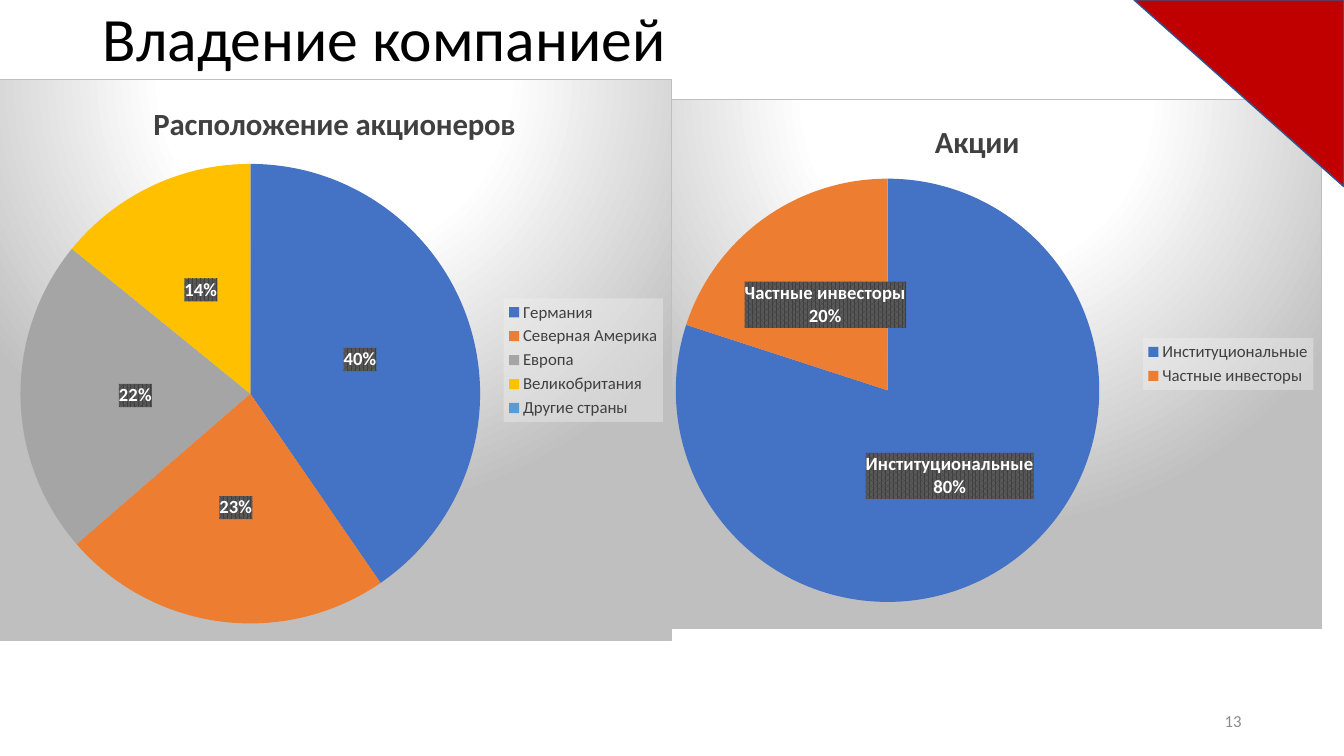
from pptx import Presentation
from pptx.chart.data import CategoryChartData as PieData
from pptx.dml.color import RGBColor
from pptx.enum.chart import XL_CHART_TYPE as Kind, XL_LABEL_POSITION as Spot, XL_LEGEND_POSITION as Side
from pptx.enum.shapes import MSO_SHAPE as Form
from pptx.enum.text import MSO_ANCHOR as Anchor, PP_ALIGN as Align
from pptx.oxml import parse_xml
from pptx.oxml.ns import nsdecls, qn
from pptx.util import Cm, Pt

FONT = "Calibri"
COLORS = ["4472C4", "ED7D31", "A5A5A5", "FFC000", "5B9BD5"]
TITLE = ("Владение компанией", (2.34, -0.79, 29.21, 3.68))
NUMBER = ("13", (23.92, 17.65, 7.62, 1.02))
CORNER = (28.58, 0, 5.28, 4.7)
SHARES = {
    "title": "Акции",
    "box": (15.93, 2.49, 17.39, 13.36),
    "plot": (0.02, 0.15, 0.7, 0.8),
    "rows": [("Институциональные", 80), ("Частные инвесторы", 20)],
    "named": True,
}
PLACES = {
    "title": "Расположение акционеров",
    "box": (-0.07, 2, 17, 14.15),
    "plot": (0.03, 0.15, 0.69, 0.82),
    "rows": [("Германия", 40), ("Северная Америка", 23), ("Европа", 22),
             ("Великобритания", 14), ("Другие страны", 0)],
    "named": False,
}
BACK = """<a:gradFill><a:gsLst><a:gs pos="0"><a:srgbClr val="FFFFFF"/></a:gs>
<a:gs pos="39000"><a:srgbClr val="FFFFFF"/></a:gs><a:gs pos="100000"><a:srgbClr val="BFBFBF"/></a:gs>
</a:gsLst><a:path path="circle"><a:fillToRect l="50000" t="-80000" r="50000" b="180000"/></a:path>
</a:gradFill><a:ln w="9525"><a:solidFill><a:srgbClr val="BFBFBF"/></a:solidFill></a:ln>"""
TAG = """<a:pattFill prst="pct75"><a:fgClr><a:srgbClr val="404040"/></a:fgClr>
<a:bgClr><a:srgbClr val="595959"/></a:bgClr></a:pattFill>"""
PALE = '<a:solidFill><a:srgbClr val="F2F2F2"><a:alpha val="39000"/></a:srgbClr></a:solidFill>'


def paint(color, code):
    color.rgb = RGBColor.from_string(code)


def style(font, size, code, bold=False):
    font.name, font.size, font.bold = FONT, Pt(size), bold
    paint(font.color, code)


def write(frame, text, size=12, color="000000", bold=False, align=Align.LEFT, gap=1.0):
    frame.word_wrap, frame.vertical_anchor = True, Anchor.MIDDLE
    line = frame.paragraphs[0]
    line.alignment, line.line_spacing = align, gap
    run = line.add_run()
    run.text = text
    style(run.font, size, color, bold)


def node(tag, inner):
    return parse_xml(f'<c:{tag} {nsdecls("c", "a")}>{inner}</c:{tag}>')


def place(chart, plot):
    area = chart._chartSpace.chart.plotArea
    for old in area.findall(qn("c:layout")):
        area.remove(old)
    spots = "".join(f'<c:{key} val="{val}"/>' for key, val in zip("xywh", plot))
    modes = '<c:layoutTarget val="inner"/><c:xMode val="edge"/><c:yMode val="edge"/>'
    area.insert(0, node("layout", f"<c:manualLayout>{modes}{spots}</c:manualLayout>"))


def label(series, named):
    tags = series.data_labels
    tags.show_value, tags.show_percentage, tags.show_category_name = False, True, named
    tags.number_format, tags.number_format_is_linked = "0%", False
    tags.position = Spot.CENTER
    style(tags.font, 13.3, "FFFFFF", True)
    root = tags._element
    root.find(qn("c:numFmt")).addnext(node("spPr", TAG))
    if named:
        split = node("separator", "")
        split.text = "\n"
        root.find(qn("c:showBubbleSize")).addnext(split)


def pie(slide, title, box, plot, rows, named):
    data = PieData()
    data.categories = [name for name, _ in rows]
    data.add_series(title, [val for _, val in rows])
    chart = slide.shapes.add_chart(Kind.PIE, *map(Cm, box), data).chart
    style(chart.font, 10, "000000")
    chart._chartSpace.chart.addnext(node("spPr", BACK))
    chart.has_title = True
    write(chart.chart_title.text_frame, title, 22, "404040", True, Align.CENTER)
    chart.has_legend = True
    key = chart.legend
    key.position, key.include_in_layout = Side.RIGHT, False
    style(key.font, 12, "404040")
    key._element.find(qn("c:overlay")).addnext(node("spPr", PALE))
    place(chart, plot)
    chart.plots[0].vary_by_categories = True
    series = chart.plots[0].series[0]
    for i, code in zip(range(len(rows)), COLORS):
        fill = series.points[i].format.fill
        fill.solid()
        paint(fill.fore_color, code)
    label(series, named)


def main():
    """Build the ownership slide with its two pie charts."""
    deck = Presentation()
    deck.slide_width, deck.slide_height = Cm(33.87), Cm(19.05)
    slide = deck.slides.add_slide(deck.slide_layouts[6])
    shapes = slide.shapes
    pie(slide, **SHARES)
    text, box = TITLE
    write(shapes.add_textbox(*map(Cm, box)).text_frame, text, size=44, gap=0.9)
    corner = shapes.add_shape(Form.RIGHT_TRIANGLE, *map(Cm, CORNER))
    corner.rotation, corner.shadow.inherit = 180, False
    corner.fill.solid()
    paint(corner.fill.fore_color, "C00000")
    paint(corner.line.color, "325491")
    corner.line.width = Pt(1)
    text, box = NUMBER
    write(shapes.add_textbox(*map(Cm, box)).text_frame, text, color="8C8C8C", align=Align.RIGHT)
    pie(slide, **PLACES)
    deck.save("out.pptx")


if __name__ == "__main__":
    main()
